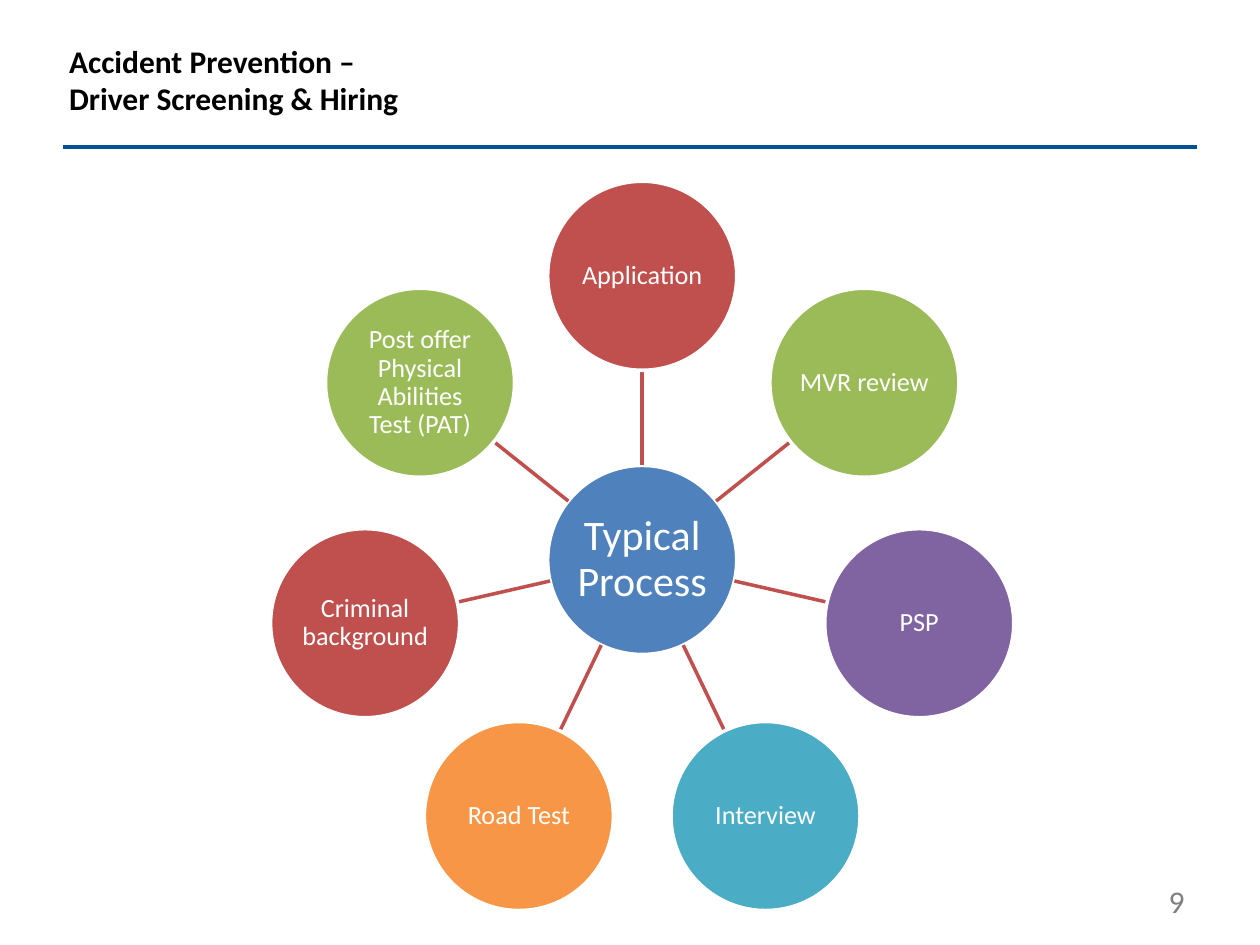
"""Builds a slide with the driver screening steps around a central hub."""
from dataclasses import dataclass
from math import cos, pi, sin

from lxml.etree import SubElement
from pptx import Presentation
from pptx.dml.color import RGBColor
from pptx.enum.shapes import MSO_CONNECTOR, MSO_SHAPE
from pptx.enum.text import MSO_ANCHOR, PP_ALIGN
from pptx.oxml.ns import qn
from pptx.util import Pt


@dataclass(frozen=True)
class Theme:
    font: str = "Calibri"
    black: str = "000000"
    white: str = "FFFFFF"
    gray: str = "7F7F7F"
    rule: str = "005294"
    blue: str = "4F81BD"
    red: str = "C0504D"
    green: str = "9BBB59"
    purple: str = "8064A2"
    teal: str = "4BACC6"
    orange: str = "F79646"
    heading: int = 18
    hub: int = 24
    step: int = 15
    line: int = 2


class SlideBuilder:
    def __init__(self, slide, theme):
        self.slide = slide
        self.theme = theme

    def set_text(self, tf, text, size, color, align, bold=False):
        tf.word_wrap = True
        p = tf.paragraphs[0]
        p.text = text
        p.alignment = align
        for r in p.runs:
            r.font.name = self.theme.font
            r.font.size = Pt(size)
            r.font.bold = bold
            r.font.color.rgb = RGBColor.from_string(color)
        return p

    def text(self, x, y, w, h, text, color, align=PP_ALIGN.LEFT, bold=False):
        box = self.slide.shapes.add_textbox(Pt(x), Pt(y), Pt(w), Pt(h))
        self.set_text(box.text_frame, text, self.theme.heading, color, align, bold)

    def line(self, x1, y1, x2, y2, color):
        cxn = self.slide.shapes.add_connector(
            MSO_CONNECTOR.STRAIGHT, Pt(x1), Pt(y1), Pt(x2), Pt(y2))
        cxn.line.color.rgb = RGBColor.from_string(color)
        cxn.line.width = Pt(self.theme.line)
        SubElement(cxn._element.spPr, qn("a:effectLst"))

    def circle(self, cx, cy, radius, text, fill, size, inset):
        sp = self.slide.shapes.add_shape(
            MSO_SHAPE.OVAL, Pt(cx - radius), Pt(cy - radius), Pt(2 * radius), Pt(2 * radius))
        sp.shadow.inherit = False
        sp.fill.solid()
        sp.fill.fore_color.rgb = RGBColor.from_string(fill)
        sp.line.color.rgb = RGBColor.from_string(self.theme.white)
        sp.line.width = Pt(self.theme.line)
        tf = sp.text_frame
        tf.vertical_anchor = MSO_ANCHOR.MIDDLE
        tf.margin_left = tf.margin_right = tf.margin_top = tf.margin_bottom = Pt(inset)
        p = self.set_text(tf, text, size, self.theme.white, PP_ALIGN.CENTER)
        p.line_spacing = 0.9

    def radial(self, cx, cy, radius, orbit, hub, steps):
        self.circle(cx, cy, radius, hub, self.theme.blue, self.theme.hub, 1.2)
        for i, (text, fill) in enumerate(steps):
            angle = 2 * pi * i / len(steps)
            dx, dy = sin(angle), -cos(angle)
            near, far = radius, orbit - radius
            self.line(cx + near * dx, cy + near * dy,
                      cx + far * dx, cy + far * dy, self.theme.red)
            self.circle(cx + orbit * dx, cy + orbit * dy, radius,
                        text, fill, self.theme.step, 0.75)


def main():
    theme = Theme()
    prs = Presentation()
    prs.slide_width, prs.slide_height = Pt(720), Pt(540)
    s = SlideBuilder(prs.slides.add_slide(prs.slide_layouts[6]), theme)

    s.line(36, 84, 684, 84, theme.rule)
    s.text(32.4, 20.2, 648, 62.6, "Accident Prevention – \vDriver Screening & Hiring",
           theme.black, bold=True)
    s.text(516, 500.4, 168, 28.8, "9", theme.gray, PP_ALIGN.RIGHT)
    s.radial(367, 320, 54, 162.4, "Typical Process", [
        ("Application", theme.red),
        ("MVR review", theme.green),
        ("PSP", theme.purple),
        ("Interview", theme.teal),
        ("Road Test", theme.orange),
        ("Criminal background", theme.red),
        ("Post offer Physical Abilities Test (PAT)", theme.green),
    ])
    prs.save("out.pptx")


if __name__ == "__main__":
    main()
